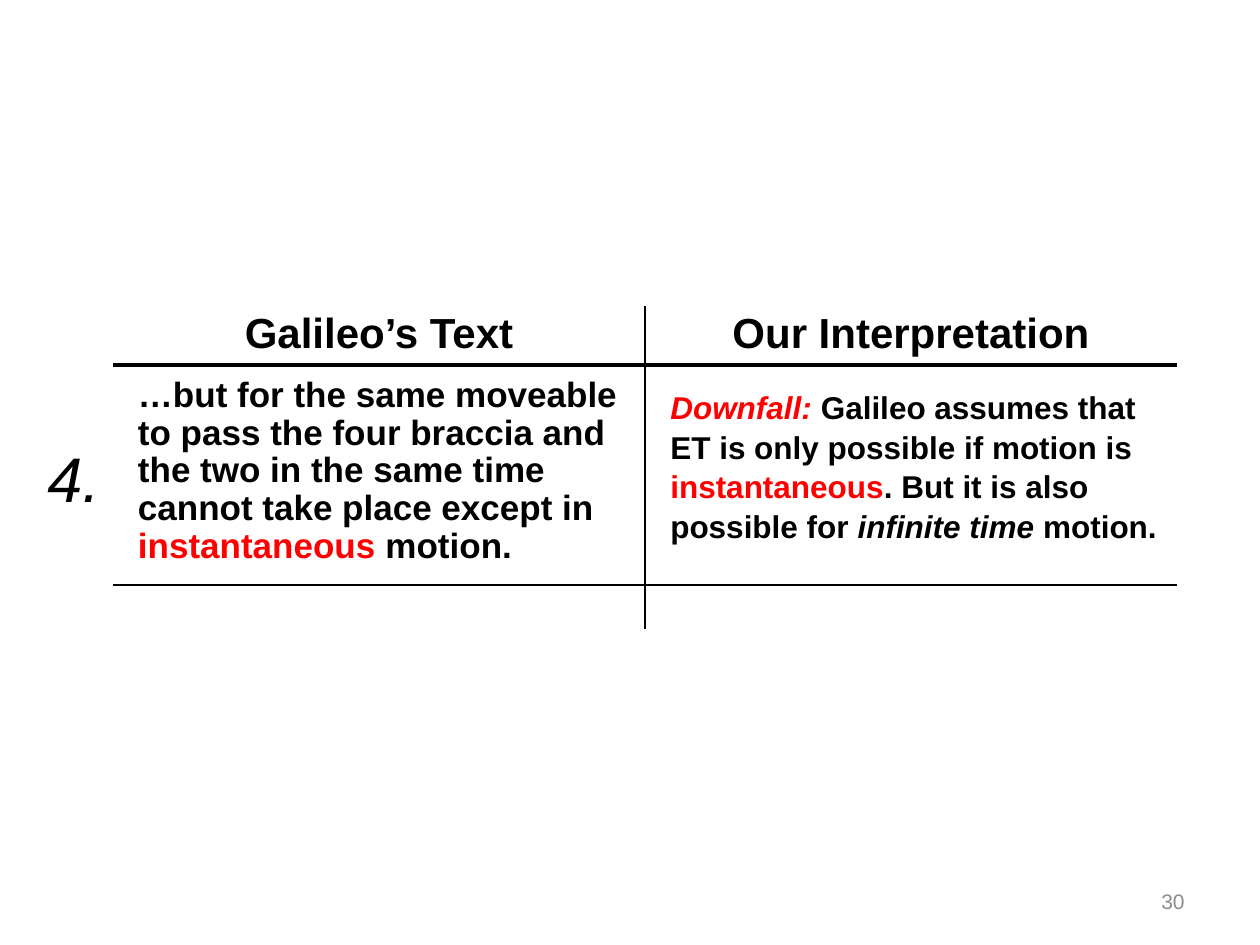
from dataclasses import dataclass

from lxml import etree
from pptx import Presentation
from pptx.dml.color import RGBColor
from pptx.enum.text import MSO_ANCHOR, PP_ALIGN
from pptx.oxml.ns import qn
from pptx.util import Emu, Pt

LEFT, CENTER, RIGHT = PP_ALIGN.LEFT, PP_ALIGN.CENTER, PP_ALIGN.RIGHT
TOP, MIDDLE = MSO_ANCHOR.TOP, MSO_ANCHOR.MIDDLE
PX = 914400 / 126
NO_TABLE_STYLE = "{2D5ABB26-0587-4C30-8999-92F81FD0307C}"


@dataclass(frozen=True)
class Theme:
    font: str = "Arial"
    ink: str = "000000"
    accent: str = "FF0000"
    muted: str = "8C8C8C"
    step: int = 36
    heading: int = 24
    quote: int = 20
    comment: int = 18
    footer: int = 12


THEME = Theme()


@dataclass(frozen=True)
class Span:
    text: str
    color: str | None = None
    italic: bool | None = None


@dataclass(frozen=True)
class Style:
    size: int
    color: str = THEME.ink
    bold: bool = False
    italic: bool = False
    align: PP_ALIGN = LEFT
    spacing: float = 1.0


@dataclass(frozen=True)
class Note:
    box: tuple[int, int, int, int]
    spans: list[Span]
    style: Style
    anchor: MSO_ANCHOR = TOP
    wrap: bool = True


HEADING = Style(THEME.heading, bold=True, align=CENTER, spacing=0.97)
QUOTE = Style(THEME.quote, bold=True, spacing=0.97)

HEADINGS = ["Galileo’s Text", "Our Interpretation"]
GALILEO_QUOTE = [
    Span("…but for the same moveable to pass the four braccia and the two "
         "in the same time cannot take place except in "),
    Span("instantaneous ", THEME.accent),
    Span("motion."),
]
NOTES = [
    Note((35, 430, 94, 89), [Span("4.")],
         Style(THEME.step, italic=True, spacing=1.05), wrap=False),
    Note((658, 380, 519, 165), [
        Span("Downfall: ", THEME.accent, True),
        Span("Galileo assumes that ET is only possible if motion is "),
        Span("instantaneous", THEME.accent),
        Span(". But it is also possible for"),
        Span(" infinite time", italic=True),
        Span(" motion."),
    ], Style(THEME.comment, bold=True, spacing=1.05)),
    Note((903, 876, 294, 50), [Span("30")],
         Style(THEME.footer, THEME.muted, align=RIGHT), MIDDLE),
]

TABLE_LEFT, TABLE_TOP, COLUMN_WIDTH = 113, 306, 532
ROW_HEIGHTS = [59, 220, 44]
RULE_WIDTHS = [2, 1]  # points, below the heading row and the quote row
DIVIDER_WIDTH = 1


def px(length: int) -> Emu:
    return Emu(round(length * PX))


def write(frame, spans: list[Span], style: Style) -> None:
    paragraph = frame.paragraphs[0]
    paragraph.alignment = style.align
    paragraph.line_spacing = style.spacing
    font = paragraph.font
    font.name, font.size = THEME.font, Pt(style.size)
    font.bold, font.italic = style.bold, style.italic
    font.color.rgb = RGBColor.from_string(style.color)
    for span in spans:
        run = paragraph.add_run()
        run.text = span.text
        if span.color:
            run.font.color.rgb = RGBColor.from_string(span.color)
        if span.italic is not None:
            run.font.italic = span.italic


def add_note(slide, note: Note) -> None:
    frame = slide.shapes.add_textbox(*map(px, note.box)).text_frame
    frame.word_wrap = note.wrap
    frame.vertical_anchor = note.anchor
    write(frame, note.spans, note.style)


def set_border(cell, side: str, points: int) -> None:
    """Draw one side; call in the order lnL, lnR, lnT, lnB."""
    line = etree.SubElement(cell._tc.get_or_add_tcPr(), qn(f"a:{side}"),
                            w=str(Pt(points)))
    fill = etree.SubElement(line, qn("a:solidFill"))
    etree.SubElement(fill, qn("a:srgbClr"), val=THEME.ink)


def rule_cell(cell, row: int, column: int) -> None:
    """Give a cell its share of the divider and of the rules between rows."""
    set_border(cell, "lnL" if column else "lnR", DIVIDER_WIDTH)
    if row > 0:
        set_border(cell, "lnT", RULE_WIDTHS[row - 1])
    if row < len(RULE_WIDTHS):
        set_border(cell, "lnB", RULE_WIDTHS[row])
    cell.fill.background()


def add_comparison(slide) -> None:
    rows, columns = len(ROW_HEIGHTS), len(HEADINGS)
    table = slide.shapes.add_table(
        rows, columns, px(TABLE_LEFT), px(TABLE_TOP),
        px(COLUMN_WIDTH * columns), px(sum(ROW_HEIGHTS))).table
    table.first_row = table.horz_banding = False
    table._tbl.tblPr.find(qn("a:tableStyleId")).text = NO_TABLE_STYLE
    for column in table.columns:
        column.width = px(COLUMN_WIDTH)
    for row, height in zip(table.rows, ROW_HEIGHTS):
        row.height = px(height)

    for row in range(rows):
        for column in range(columns):
            cell = table.cell(row, column)
            rule_cell(cell, row, column)
            if row == rows - 1:
                cell.margin_top = cell.margin_bottom = 0

    for column, heading in enumerate(HEADINGS):
        write(table.cell(0, column).text_frame, [Span(heading)], HEADING)
    quote_cell = table.cell(1, 0)
    quote_cell.margin_left = quote_cell.margin_right = px(25)
    quote_cell.margin_top = quote_cell.margin_bottom = px(12)
    write(quote_cell.text_frame, GALILEO_QUOTE, QUOTE)


def main() -> None:
    deck = Presentation()
    deck.slide_width, deck.slide_height = px(1260), px(945)
    slide = deck.slides.add_slide(deck.slide_layouts[6])
    add_comparison(slide)
    for note in NOTES:
        add_note(slide, note)
    deck.save("out.pptx")


if __name__ == "__main__":
    main()
